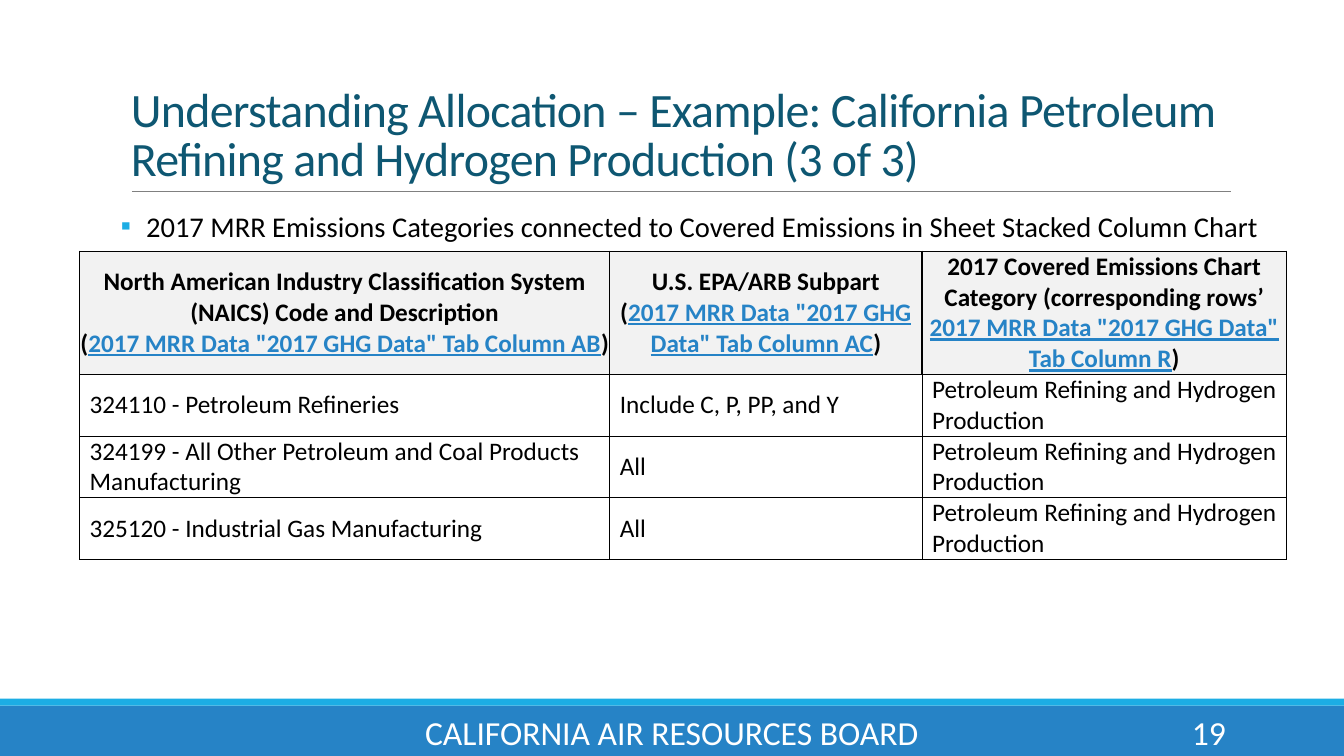
"""Build the slide on petroleum refining and hydrogen allocation."""
from lxml.etree import SubElement
from pptx import Presentation
from pptx.dml.color import RGBColor
from pptx.enum.shapes import MSO_CONNECTOR, MSO_SHAPE
from pptx.enum.text import MSO_ANCHOR, PP_ALIGN
from pptx.oxml.ns import qn
from pptx.util import Pt

BLUE = RGBColor(0x26, 0x83, 0xC6)
CYAN = RGBColor(0x1C, 0xAD, 0xE4)
TEAL = RGBColor(0x0E, 0x57, 0x72)
GRAY = RGBColor(0x80, 0x80, 0x80)
PALE = RGBColor(0xF2, 0xF2, 0xF2)
WHITE = RGBColor(0xFF, 0xFF, 0xFF)
BLACK = RGBColor(0, 0, 0)

WIDE, HIGH = 960, 540
TITLE = "Understanding Allocation – Example: California Petroleum Refining and Hydrogen Production (3 of 3)"
POINT = "2017 MRR Emissions Categories connected to Covered Emissions in Sheet Stacked Column Chart"
FOOT = "CALIFORNIA AIR RESOURCES BOARD"
PAGE = "19"
LINK = '2017 MRR Data "2017 GHG Data" Tab Column '
HEADS = [
    [["North American Industry Classification System (NAICS) Code and Description"],
     ["(", LINK + "AB", ")"]],
    [["U.S. EPA/ARB Subpart"], ["(", LINK + "AC", ")"]],
    [["2017 Covered Emissions Chart Category (corresponding rows’ ", LINK + "R", ")"]],
]
GROUP = "Petroleum Refining and Hydrogen Production"
ROWS = [
    ["324110 - Petroleum Refineries", "Include C, P, PP, and Y", GROUP],
    ["324199 - All Other Petroleum and Coal Products Manufacturing", "All", GROUP],
    ["325120 - Industrial Gas Manufacturing", "All", GROUP],
]
COLS = [378.7, 223, 260.5]
TALL = [88, 44, 44, 44]
BARS = [(504, 36, BLUE), (499, 5, CYAN)]
FLAT = {"margin_left": 0, "margin_right": 0}
MID = {"vertical_anchor": MSO_ANCHOR.MIDDLE}
BARE = {**FLAT, **MID, "margin_top": 0, "margin_bottom": 0}


def assign(item, form):
    for name, value in form.items():
        setattr(item, name, value)


def write(para, text, size, color, **form):
    run = para.add_run()
    run.text = text
    assign(run.font, {"name": "Calibri", "size": Pt(size), **form})
    run.font.color.rgb = color
    return run


def label(slide, area, text, size, color, frame, form):
    body = slide.shapes.add_textbox(*map(Pt, area)).text_frame
    assign(body, {"word_wrap": True, **frame})
    para = body.paragraphs[0]
    assign(para, form)
    return para, write(para, text, size, color)


def indent(para, left, first=0):
    props = para._p.get_or_add_pPr()
    props.set("marL", str(Pt(left)))
    props.set("indent", str(Pt(first)))
    return props


def edge(cell, row, col):
    head = row == 0
    wide = {"L": head or col == 0, "R": head or col == len(COLS) - 1,
            "T": row <= 1, "B": head}
    props = cell._tc.get_or_add_tcPr()
    for side, thick in wide.items():
        line = SubElement(props, qn("a:ln" + side), w=str(Pt(1 if thick else 0.5)))
        SubElement(SubElement(line, qn("a:solidFill")), qn("a:srgbClr"), val=str(BLACK))


def base(slide):
    for top, tall, color in BARS:
        bar = slide.shapes.add_shape(MSO_SHAPE.RECTANGLE, 0, Pt(top), Pt(WIDE), Pt(tall))
        bar.shadow.inherit = False
        bar.fill.solid()
        bar.fill.fore_color.rgb = color
        bar.line.fill.background()
    rule = slide.shapes.add_connector(
        MSO_CONNECTOR.STRAIGHT, Pt(94.3), Pt(136.8), Pt(879), Pt(136.8))
    rule.line.color.rgb = GRAY
    rule.line.width = Pt(0.5)
    SubElement(rule._element.spPr, qn("a:effectLst"))
    label(slide, (290.2, 508.3, 379.4, 28.8), FOOT, 24, WHITE, MID,
          {"alignment": PP_ALIGN.CENTER})
    label(slide, (779.8, 508.3, 103, 28.8), PAGE, 24, WHITE, MID,
          {"alignment": PP_ALIGN.RIGHT})


def intro(slide):
    _, run = label(slide, (86.4, 22.3, 792, 114.5), TITLE, 34.2, TEAL,
                   {"vertical_anchor": MSO_ANCHOR.BOTTOM}, {"line_spacing": 0.85})
    run.font._element.set("spc", "-50")
    para, _ = label(slide, (86.4, 145.4, 833, 38.9), POINT, 20.4, BLACK, FLAT,
                    {"space_before": Pt(12), "space_after": Pt(2)})
    props = indent(para, 18, -18)
    SubElement(SubElement(props, qn("a:buClr")), qn("a:srgbClr"), val=str(CYAN))
    SubElement(props, qn("a:buFont"), typeface="Calibri")
    SubElement(props, qn("a:buChar"), char="▪")


def grid(slide):
    table = slide.shapes.add_table(
        len(TALL), len(COLS), Pt(56.9), Pt(179.5), Pt(sum(COLS)), Pt(sum(TALL))).table
    for col, wide in enumerate(COLS):
        table.columns[col].width = Pt(wide)
    plain = [[[[text]] for text in row] for row in ROWS]
    for row, cells in enumerate([HEADS] + plain):
        table.rows[row].height = Pt(TALL[row])
        for col, paras in enumerate(cells):
            cell = table.cell(row, col)
            assign(cell, BARE)
            edge(cell, row, col)
            cell.fill.solid()
            cell.fill.fore_color.rgb = WHITE if row else PALE
            fill(cell.text_frame, paras, row == 0)


def fill(body, paras, head):
    for num, parts in enumerate(paras):
        para = body.add_paragraph() if num else body.paragraphs[0]
        if head:
            para.alignment = PP_ALIGN.CENTER
        else:
            indent(para, 7.2)
        for text in parts:
            link = text.startswith(LINK)
            write(para, text, 18, BLUE if link else BLACK, bold=head, underline=link)


def main():
    deck = Presentation()
    assign(deck, {"slide_width": Pt(WIDE), "slide_height": Pt(HIGH)})
    slide = deck.slides.add_slide(deck.slide_layouts[6])
    for draw in (base, intro, grid):
        draw(slide)
    deck.save("out.pptx")


if __name__ == "__main__":
    main()
